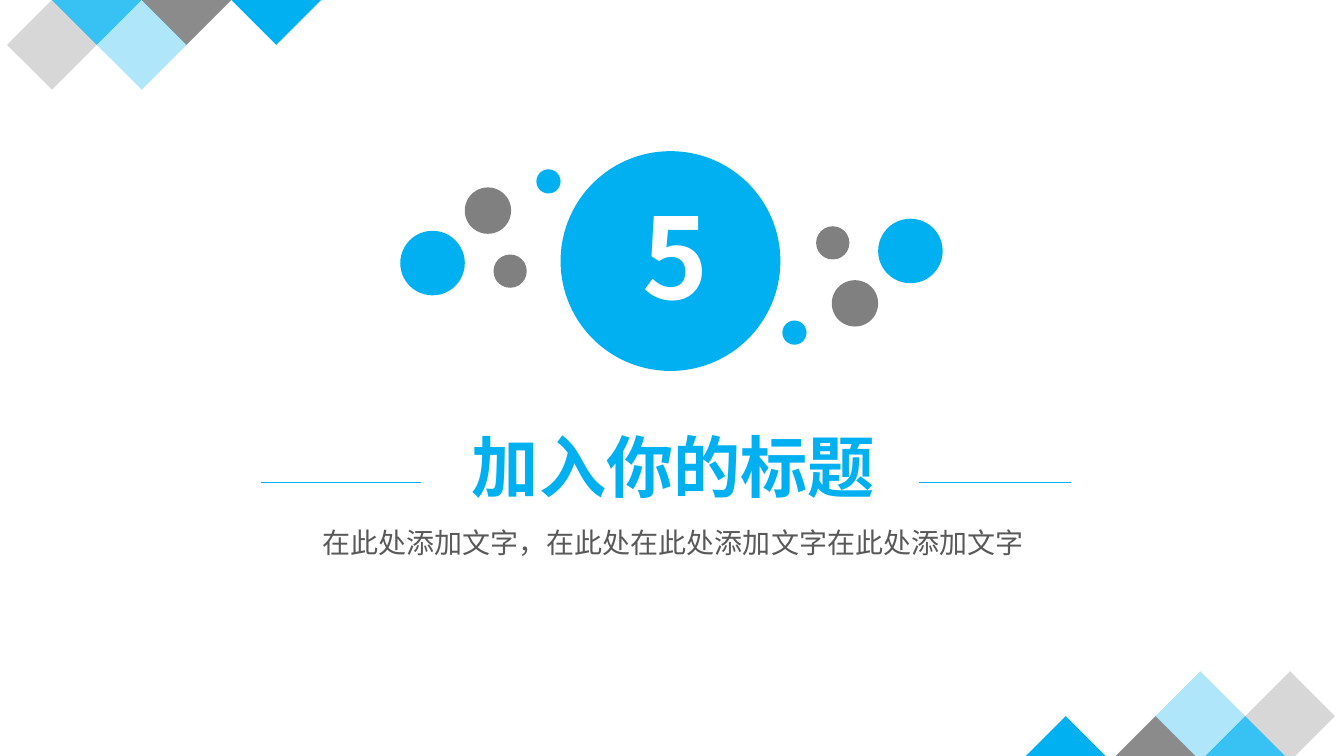
from dataclasses import dataclass

from lxml import etree
from pptx import Presentation
from pptx import util as u
from pptx.dml.color import RGBColor
from pptx.enum import shapes, text
from pptx.oxml.ns import qn


@dataclass(frozen=True)
class Theme:
    blue: str = "00B0F0"
    grey: str = "808080"
    body: str = "595959"
    white: str = "FFFFFF"
    font: str = "Noto Sans CJK SC"
    number_pt: int = 80
    title_pt: int = 48
    body_pt: int = 20
    rule_pt: float = 0.75


@dataclass(frozen=True)
class Diamond:
    col: int
    row: int
    color: str
    opacity: int


@dataclass(frozen=True)
class Dot:
    dx: float
    dy: float
    size: float
    color: str


@dataclass(frozen=True)
class Label:
    words: str
    box: tuple[float, float, float, float]
    size: int
    color: str
    bold: bool = False
    wrap: bool = True


T = Theme()

# Diamond corners: (x, y) of the first centre, and the direction of growth
CORNERS = [(10.57, 7.55, 1), (2.74, 0, -1)]
DIAMOND_SIDE, DIAMOND_STEP = 0.63, 0.445
DIAMONDS = [
    Diamond(0, 0, T.blue, 100),
    Diamond(2, 0, T.grey, 91),
    Diamond(4, 0, T.blue, 78),
    Diamond(3, 1, T.blue, 31),
    Diamond(5, 1, T.grey, 31),
]

# Dots lie left of this centre and are reflected through it to the right
DOTS_X, DOTS_Y = 6.66, 2.55
DOTS = [
    Dot(-2.37, 0.06, 0.64, T.blue),
    Dot(-1.6, 0.14, 0.33, T.grey),
    Dot(-1.22, -0.75, 0.24, T.blue),
    Dot(-1.82, -0.46, 0.46, T.grey),
]

NUMBER = Label("5", (6.26, 1.81, 0.89, 1.45), T.number_pt, T.white, True, False)
CAPTIONS = [
    Label("加入你的标题", (3.87, 4.17, 5.62, 0.91), T.title_pt, T.blue, True),
    Label("在此处添加文字，在此处在此处添加文字在此处添加文字",
          (1.44, 5.16, 10.47, 0.44), T.body_pt, T.body),
]

RULE_Y = 4.79
RULES = [(2.59, 4.18), (9.11, 10.62)]


def add_centred(parent, kind, x: float, y: float, size: float, color: str,
                opacity: int = 100):
    """Draw a plain filled shape around the centre (x, y)."""
    sp = parent.add_shape(kind, u.Inches(x - size / 2), u.Inches(y - size / 2),
                          u.Inches(size), u.Inches(size))
    sp.shadow.inherit = False
    sp.line.fill.background()
    sp.fill.solid()
    sp.fill.fore_color.rgb = RGBColor.from_string(color)
    if opacity < 100:
        clr = sp._element.spPr.find(qn("a:solidFill"))[0]
        etree.SubElement(clr, qn("a:alpha"), val=str(opacity * 1000))
    return sp


def add_label(parent, label: Label) -> None:
    tf = parent.add_textbox(*map(u.Inches, label.box)).text_frame
    tf.word_wrap = label.wrap
    tf.auto_size = text.MSO_AUTO_SIZE.SHAPE_TO_FIT_TEXT
    p = tf.paragraphs[0]
    p.text = label.words
    p.alignment = text.PP_ALIGN.CENTER
    p.font.size = u.Pt(label.size)
    p.font.bold = label.bold
    p.font.color.rgb = RGBColor.from_string(label.color)
    p.font.name = T.font
    # East Asian glyphs need their own typeface entry
    etree.SubElement(p._p.pPr.find(qn("a:defRPr")), qn("a:ea"), typeface=T.font)


def add_rule(s, left: float, right: float) -> None:
    line = s.shapes.add_connector(shapes.MSO_CONNECTOR.STRAIGHT,
                                  u.Inches(left), u.Inches(RULE_Y),
                                  u.Inches(right), u.Inches(RULE_Y))
    line.line.color.rgb = RGBColor.from_string(T.blue)
    line.line.width = u.Pt(T.rule_pt)
    etree.SubElement(line._element.spPr, qn("a:effectLst"))


def main() -> None:
    prs = Presentation()
    prs.slide_width, prs.slide_height = u.Inches(13.33), u.Inches(7.5)
    s = prs.slides.add_slide(prs.slide_layouts[6])

    # Corner diamonds
    for x, y, way in CORNERS:
        for d in DIAMONDS:
            sp = add_centred(s.shapes, shapes.MSO_SHAPE.RECTANGLE,
                             x + way * d.col * DIAMOND_STEP,
                             y - way * d.row * DIAMOND_STEP,
                             DIAMOND_SIDE, d.color, d.opacity)
            sp.rotation = 45

    # Dots on both sides of the number
    for side in (1, -1):
        group = s.shapes.add_group_shape().shapes
        for dot in DOTS:
            add_centred(group, shapes.MSO_SHAPE.OVAL, DOTS_X + side * dot.dx,
                        DOTS_Y + side * dot.dy, dot.size, dot.color)

    # Section number
    badge = s.shapes.add_group_shape().shapes
    add_centred(badge, shapes.MSO_SHAPE.OVAL, 6.65, 2.59, 2.18, T.blue)
    add_label(badge, NUMBER)

    # Title and subtitle
    for label in CAPTIONS:
        add_label(s.shapes, label)

    # Rules beside the title
    for left, right in RULES:
        add_rule(s, left, right)

    prs.save("out.pptx")


if __name__ == "__main__":
    main()
